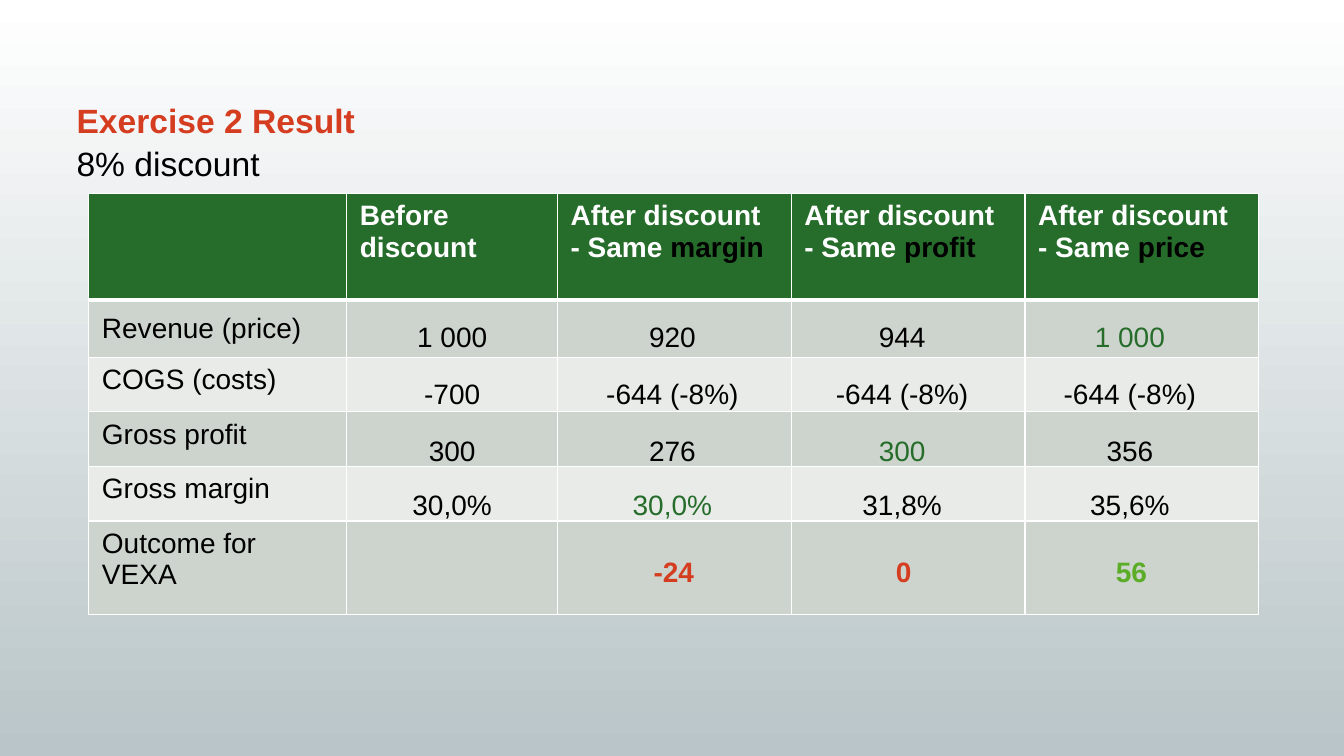
from lxml.etree import SubElement as sub
from pptx import Presentation
from pptx.dml.color import RGBColor
from pptx.enum.text import MSO_ANCHOR as ANCHOR, MSO_AUTO_SIZE as SIZE, PP_ALIGN as ALIGN
from pptx.oxml.ns import qn
from pptx.util import Pt

HUES = {
    "red": "D53D20", "green": "266D2B", "lime": "5BAC26", "black": "000000",
    "white": "FFFFFF", "dark": "CDD4CD", "light": "E8EBE8", "mist": "B9C5C8",
}
HEADS = ["", "Before discount", "margin", "profit", "price"]
LABELS = ["Revenue (price)", "COGS (costs)", "Gross profit", "Gross margin",
          "Outcome for VEXA"]
COLS = [184.3, 150.5, 167, 167, 167]
ROWS = [76, 41, 39, 39, 39, 67]
TOPS = [224.6, 265.7, 306, 344.9, 392.4]
# Left edge, width and (text, colour) pairs of each column of values
VALUES = [
    (247, 152, [("1 000", "black"), ("-700", "black"), ("300", "black"),
                ("30,0%", "black")]),
    (398.2, 164.2, [("920", "black"), ("-644 (-8%)", "black"), ("276", "black"),
                    ("30,0%", "green"), ("-24", "red")]),
    (562.3, 164.2, [("944", "black"), ("-644 (-8%)", "black"), ("300", "green"),
                    ("31,8%", "black"), ("0", "red")]),
    (725, 164.2, [("1 000", "green"), ("-644 (-8%)", "black"), ("356", "black"),
                  ("35,6%", "black"), ("56", "lime")]),
]


def rgb(hue):
    return RGBColor.from_string(HUES[hue])


def style(run, size, hue, bold=False):
    font = run.font
    font.name, font.size, font.bold = "Arial", Pt(size), bold
    font.color.rgb = rgb(hue)


def shade(slide):
    fill = slide.background.fill
    fill.gradient()
    fill.gradient_angle = 90
    for stop, hue, pos in zip(fill.gradient_stops, ("mist", "white"), (0, 1)):
        stop.color.rgb = rgb(hue)
        stop.position = pos


def title(slide, left, top, width, height):
    box = slide.shapes.title
    box.left, box.top, box.width, box.height = map(Pt, (left, top, width, height))
    frame = box.text_frame
    frame.auto_size = SIZE.NONE
    frame.vertical_anchor = ANCHOR.MIDDLE
    frame.text = "Exercise 2 Result \v8% discount"
    para = frame.paragraphs[0]
    para.alignment = ALIGN.LEFT
    para.line_spacing = 1.06
    name, note = para.runs
    style(name, 24, "red", True)
    style(note, 24, "black")


def paint(cell, hue, base):
    """Give a cell its white borders, the lower one base points wide, and its fill."""
    props = cell._tc.get_or_add_tcPr()
    for side, width in (("L", 1), ("R", 1), ("T", 1), ("B", base)):
        line = sub(props, qn(f"a:ln{side}"), w=str(Pt(width)))
        sub(sub(line, qn("a:solidFill")), qn("a:srgbClr"), val=HUES["white"])
    cell.fill.solid()
    cell.fill.fore_color.rgb = rgb(hue)


def pad(cell):
    cell.margin_left = cell.margin_right = Pt(9.4)
    cell.margin_top = cell.margin_bottom = Pt(5)


def head(cell, text):
    pad(cell)
    frame = cell.text_frame
    if " " in text:
        frame.text = text
    else:
        frame.text = "After discount\n- Same "
        style(frame.paragraphs[1].add_run(), 20, "black", True)
        frame.paragraphs[1].runs[1].text = text
    for para in frame.paragraphs:
        style(para.runs[0], 20, "white", True)


def grid(slide, left, top):
    table = slide.shapes.add_table(len(ROWS), len(COLS), Pt(left), Pt(top),
                                   Pt(sum(COLS)), Pt(sum(ROWS))).table
    for col, width in zip(table.columns, COLS):
        col.width = Pt(width)
    for r, height in enumerate(ROWS):
        table.rows[r].height = Pt(height)
        hue = "green" if r == 0 else "dark" if r % 2 else "light"
        for cell in table.rows[r].cells:
            paint(cell, hue, 1 if r else 3)
    for c, text in enumerate(HEADS):
        if text:
            head(table.cell(0, c), text)
    for r, text in enumerate(LABELS, 1):
        cell = table.cell(r, 0)
        pad(cell)
        cell.text_frame.text = text
        style(cell.text_frame.paragraphs[0].runs[0], 20, "black")
    table.cell(1, 0).vertical_anchor = ANCHOR.MIDDLE


def column(slide, left, width, values):
    for r, (top, (text, hue)) in enumerate(zip(TOPS, values)):
        last = r == len(TOPS) - 1
        shift = 1 if last else 0
        box = slide.shapes.add_textbox(Pt(left + shift), Pt(top), Pt(width), Pt(31.5))
        frame = box.text_frame
        frame.word_wrap = True
        frame.auto_size = SIZE.SHAPE_TO_FIT_TEXT
        frame.text = text
        para = frame.paragraphs[0]
        para.alignment = ALIGN.CENTER
        style(para.runs[0], 20, hue, last)


def main():
    deck = Presentation()
    deck.slide_width, deck.slide_height = Pt(960), Pt(540)
    slide = deck.slides.add_slide(deck.slide_layouts[5])
    shade(slide)
    title(slide, 47.5, 67.7, 865.4, 65.5)
    grid(slide, 63.4, 138.2)
    for left, width, values in VALUES:
        column(slide, left, width, values)
    deck.save("out.pptx")


if __name__ == "__main__":
    main()
